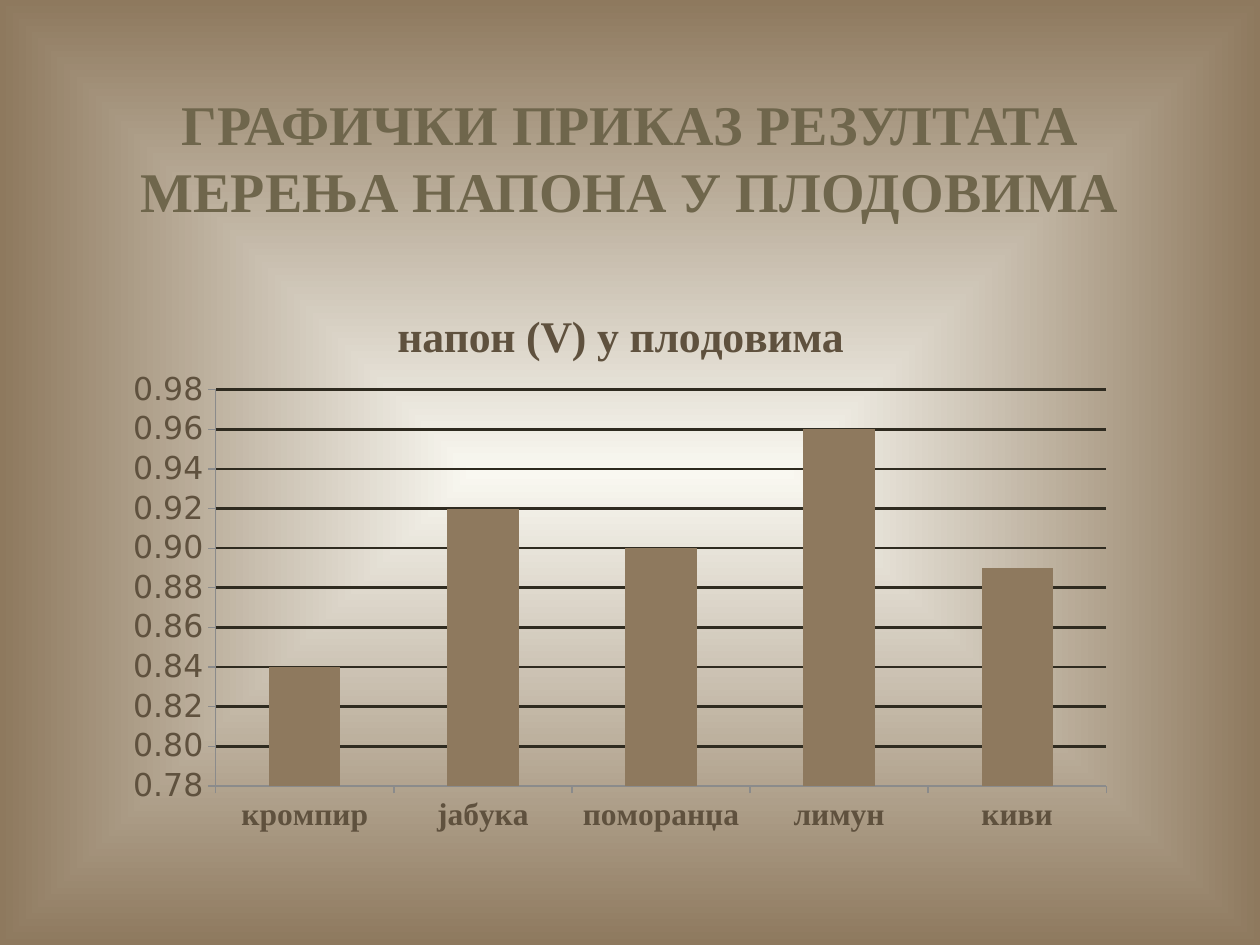
from pptx import Presentation
from pptx.chart.data import CategoryChartData
from pptx.dml.color import RGBColor
from pptx.enum.chart import XL_CHART_TYPE, XL_TICK_MARK
from pptx.enum.text import MSO_ANCHOR, PP_ALIGN
from pptx.oxml import parse_xml
from pptx.oxml.ns import nsdecls
from pptx.util import Cm, Pt

COLUMNS = XL_CHART_TYPE.COLUMN_CLUSTERED
TICK_OUT, TICK_NONE = XL_TICK_MARK.OUTSIDE, XL_TICK_MARK.NONE
MIDDLE, CENTER = MSO_ANCHOR.MIDDLE, PP_ALIGN.CENTER

SERIF, SANS = "Times New Roman", "DejaVu Sans"
COLORS = {
    "cream": "F9F8F1",
    "brown": "8E795E",
    "heading": "6F664C",
    "label": "5F513E",
    "grid": "2F2B20",
    "axis": "8B8B8B",
}
VOLTAGES = {"кромпир": 0.84, "јабука": 0.92, "поморанџа": 0.9,
            "лимун": 0.96, "киви": 0.89}


def color(name):
    return RGBColor.from_string(COLORS[name])


def set_font(font, size, name, fill, bold=False):
    font.size, font.name, font.bold = Pt(size), name, bold
    font.color.rgb = color(fill)


def set_background(page):
    """Fill the page with a gradient running from its centre to its edges."""
    stops = "".join(
        f'<a:gs pos="{position}"><a:srgbClr val="{COLORS[name]}"/></a:gs>'
        for position, name in ((0, "cream"), (100000, "brown")))
    page.element.cSld.insert(0, parse_xml(
        f'<p:bg {nsdecls("p", "a")}><p:bgPr><a:gradFill rotWithShape="1">'
        f'<a:gsLst>{stops}</a:gsLst><a:path path="shape">'
        '<a:fillToRect l="50000" t="50000" r="50000" b="50000"/></a:path>'
        '</a:gradFill><a:effectLst/></p:bgPr></p:bg>'))


def add_text(page, text, left, top, width, height, *, size, fill,
             name=SERIF, bold=False, align=CENTER):
    box = page.shapes.add_textbox(Cm(left), Cm(top), Cm(width), Cm(height))
    frame = box.text_frame
    frame.word_wrap = True
    frame.vertical_anchor = MIDDLE
    para = frame.paragraphs[0]
    para.alignment = align
    span = para.add_run()
    span.text = text
    set_font(span.font, size, name, fill, bold)


def make_layout(target="", **fractions):
    """Return a manual chart layout; fractions are of the chart's size."""
    modes = "".join(f'<c:{axis}Mode val="edge"/>' for axis in "xy")
    values = "".join(f'<c:{key} val="{value}"/>'
                     for key, value in fractions.items())
    return parse_xml(f'<c:layout {nsdecls("c")}><c:manualLayout>'
                     f'{target}{modes}{values}</c:manualLayout></c:layout>')


def style_axis(axis, font_name, bold):
    axis.major_tick_mark, axis.minor_tick_mark = TICK_OUT, TICK_NONE
    axis.format.line.color.rgb = color("axis")
    set_font(axis.tick_labels.font, 18, font_name, "label", bold)


def add_voltage_chart(page, left, top, width, height):
    data = CategoryChartData(number_format="0.00")
    data.categories = list(VOLTAGES)
    data.add_series("Series 1", list(VOLTAGES.values()))
    chart = page.shapes.add_chart(
        COLUMNS, Cm(left), Cm(top), Cm(width), Cm(height), data).chart
    set_font(chart.font, 18, SANS, "label")
    chart.has_legend = False

    title = chart.chart_title
    span = title.text_frame.paragraphs[0].add_run()
    span.text = "напон (V) у плодовима"
    set_font(span.font, 25, SERIF, "label", bold=True)
    title.include_in_layout = False
    title.element.get_or_add_tx().addnext(make_layout(x=0.28, y=0.04))

    plot = chart.plots[0]
    plot.gap_width = 150
    plot.vary_by_categories = False
    fill = plot.series[0].format.fill
    fill.solid()
    fill.fore_color.rgb = color("brown")

    style_axis(chart.category_axis, SERIF, bold=True)
    values = chart.value_axis
    style_axis(values, SANS, bold=False)
    values.minimum_scale, values.maximum_scale = 0.78, 0.98
    values.major_unit = 0.02
    values.tick_labels.number_format = "0.00"
    values.tick_labels.number_format_is_linked = False
    grid = values.major_gridlines.format.line
    grid.color.rgb = color("grid")
    grid.width = Pt(1.5)

    area = chart.element.chart.plotArea
    for layout in area.xpath("c:layout"):
        area.remove(layout)
    area.insert(0, make_layout('<c:layoutTarget val="inner"/>',
                               x=0.1, y=0.19, w=0.88, h=0.71))


def main():
    deck = Presentation()
    deck.slide_width, deck.slide_height = Cm(25.4), Cm(19.05)
    page = deck.slides.add_slide(deck.slide_layouts[6])
    set_background(page)
    add_text(page, "ГРАФИЧКИ ПРИКАЗ РЕЗУЛТАТА МЕРЕЊА НАПОНА У ПЛОДОВИМА",
             1.3, 1.88, 22.8, 2.57, size=32, fill="heading", bold=True)
    add_voltage_chart(page, 2.31, 5.72, 20.4, 11.25)
    deck.save("out.pptx")


if __name__ == "__main__":
    main()
